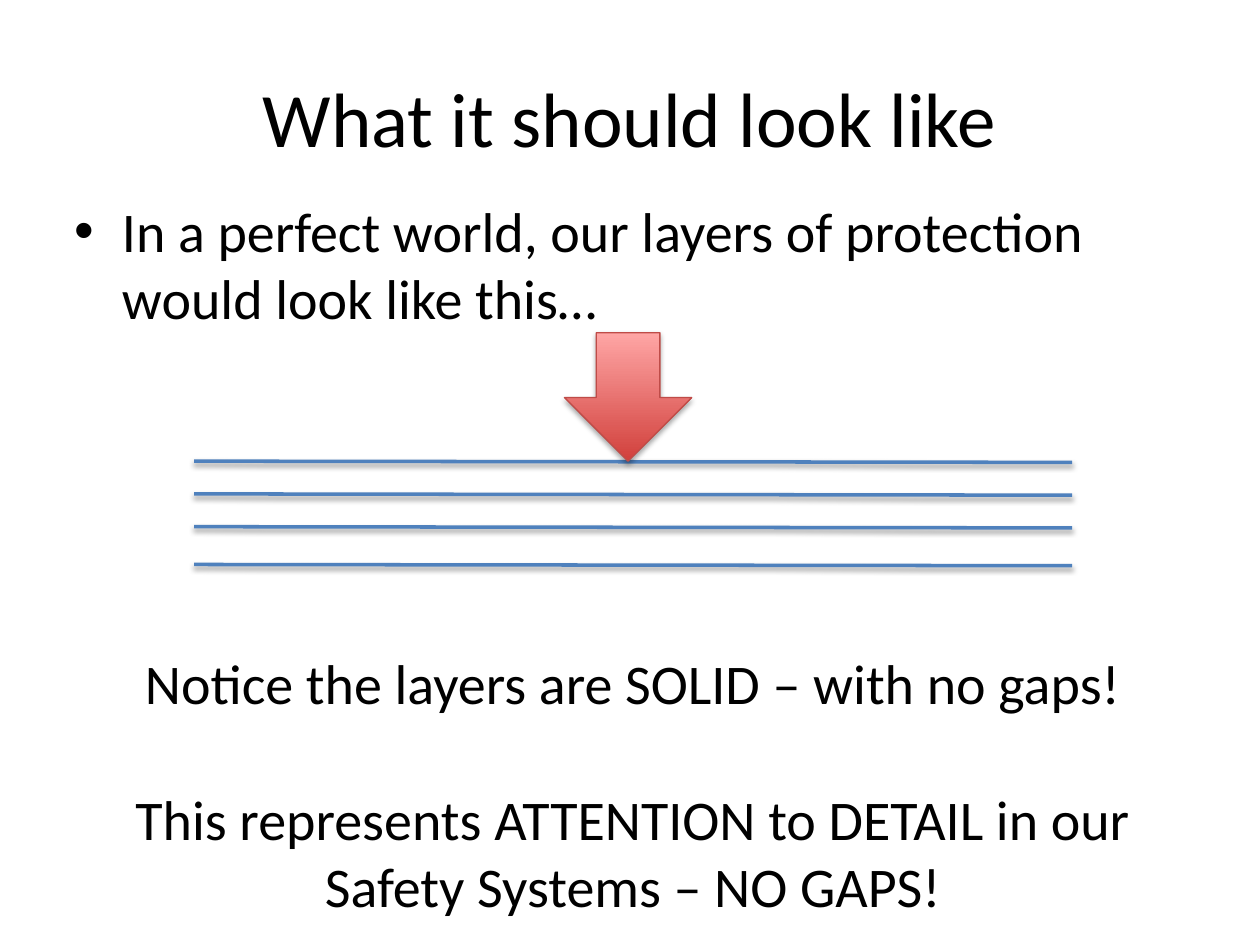
from lxml import etree
from pptx import Presentation, util as u
from pptx.dml.color import RGBColor
from pptx.enum import shapes, text
from pptx.oxml import parse_xml
from pptx.oxml.ns import nsdecls, qn

COLORS = {
    "text": "000000",
    "layer": "4F81BD",
    "arrow_edge": "BF4C48",
    "arrow_bottom": "D1403C",
    "arrow_top": "FFA6A5",
    "shadow": "000000",
}
FONT = "Calibri"
TITLE = "What it should look like"
INTRO = "In a perfect world, our layers of protection would look like this…"
CONCLUSIONS = [
    "Notice the layers are SOLID – with no gaps!",
    "This represents ATTENTION to DETAIL in our Safety Systems – NO GAPS!",
]
LAYER_LEFT, LAYER_RIGHT, LAYER_DROP = 1.54, 8.51, 0.01
LAYER_TOPS = [3.66, 3.92, 4.18, 4.48]
ARROW_BOX = (4.48, 2.64, 1.01, 1.02)


def rgb(name):
    return RGBColor.from_string(COLORS[name])


def add_text(slide, box, lines, size, align, anchor=text.MSO_ANCHOR.TOP):
    frame = slide.shapes.add_textbox(*map(u.Inches, box)).text_frame
    frame.word_wrap = True
    frame.vertical_anchor = anchor
    frame.text = "\n".join(lines)
    for paragraph in frame.paragraphs:
        paragraph.alignment = align
        font = paragraph.runs[0].font
        font.name, font.size = FONT, u.Pt(size)
        font.color.rgb = rgb("text")
    return frame.paragraphs


def add_bullet(paragraph, indent):
    properties = paragraph._p.get_or_add_pPr()
    properties.set("marL", str(u.Inches(indent)))
    properties.set("indent", str(-u.Inches(indent)))
    etree.SubElement(properties, qn("a:buFont"), typeface="Arial")
    etree.SubElement(properties, qn("a:buChar"), char="•")


def add_shadow(part, opacity, blur, distance):
    part.element.spPr.append(parse_xml(
        f'<a:effectLst {nsdecls("a")}>'
        f'<a:outerShdw blurRad="{u.Pt(blur)}" dist="{u.Pt(distance)}" dir="5400000" rotWithShape="0">'
        f'<a:srgbClr val="{COLORS["shadow"]}"><a:alpha val="{opacity * 1000}"/></a:srgbClr>'
        f'</a:outerShdw></a:effectLst>'))


def add_layer(slide, top):
    ends = (LAYER_LEFT, top, LAYER_RIGHT, top + LAYER_DROP)
    layer = slide.shapes.add_connector(shapes.MSO_CONNECTOR.STRAIGHT, *map(u.Inches, ends))
    layer.line.color.rgb = rgb("layer")
    layer.line.width = u.Pt(2)
    add_shadow(layer, 38, 3.1, 1.6)


def add_arrow(slide):
    arrow = slide.shapes.add_shape(shapes.MSO_SHAPE.DOWN_ARROW, *map(u.Inches, ARROW_BOX))
    arrow.fill.gradient()
    arrow.fill.gradient_angle = 90
    for stop, name, position in zip(arrow.fill.gradient_stops, ("arrow_bottom", "arrow_top"), (0, 1)):
        stop.color.rgb = rgb(name)
        stop.position = position
    arrow.line.color.rgb = rgb("arrow_edge")
    arrow.line.width = u.Pt(0.75)
    add_shadow(arrow, 35, 3.1, 1.8)


def main():
    deck = Presentation()
    deck.slide_width, deck.slide_height = u.Inches(10), u.Inches(7.5)
    slide = deck.slides.add_slide(deck.slide_layouts[6])

    add_text(slide, (0.5, 0.3, 9, 1.25), [TITLE], 44, text.PP_ALIGN.CENTER, text.MSO_ANCHOR.MIDDLE)
    intro = add_text(slide, (0.49, 1.51, 9, 1.18), [INTRO], 32, text.PP_ALIGN.LEFT)[0]
    intro.space_before = u.Pt(6.4)
    add_bullet(intro, 0.38)

    for top in LAYER_TOPS:
        add_layer(slide, top)

    conclusions = add_text(slide, (0.72, 5.1, 8.61, 2.26), CONCLUSIONS, 32, text.PP_ALIGN.CENTER)
    conclusions[1].space_before = u.Pt(39)
    add_arrow(slide)
    deck.save("out.pptx")


if __name__ == "__main__":
    main()
